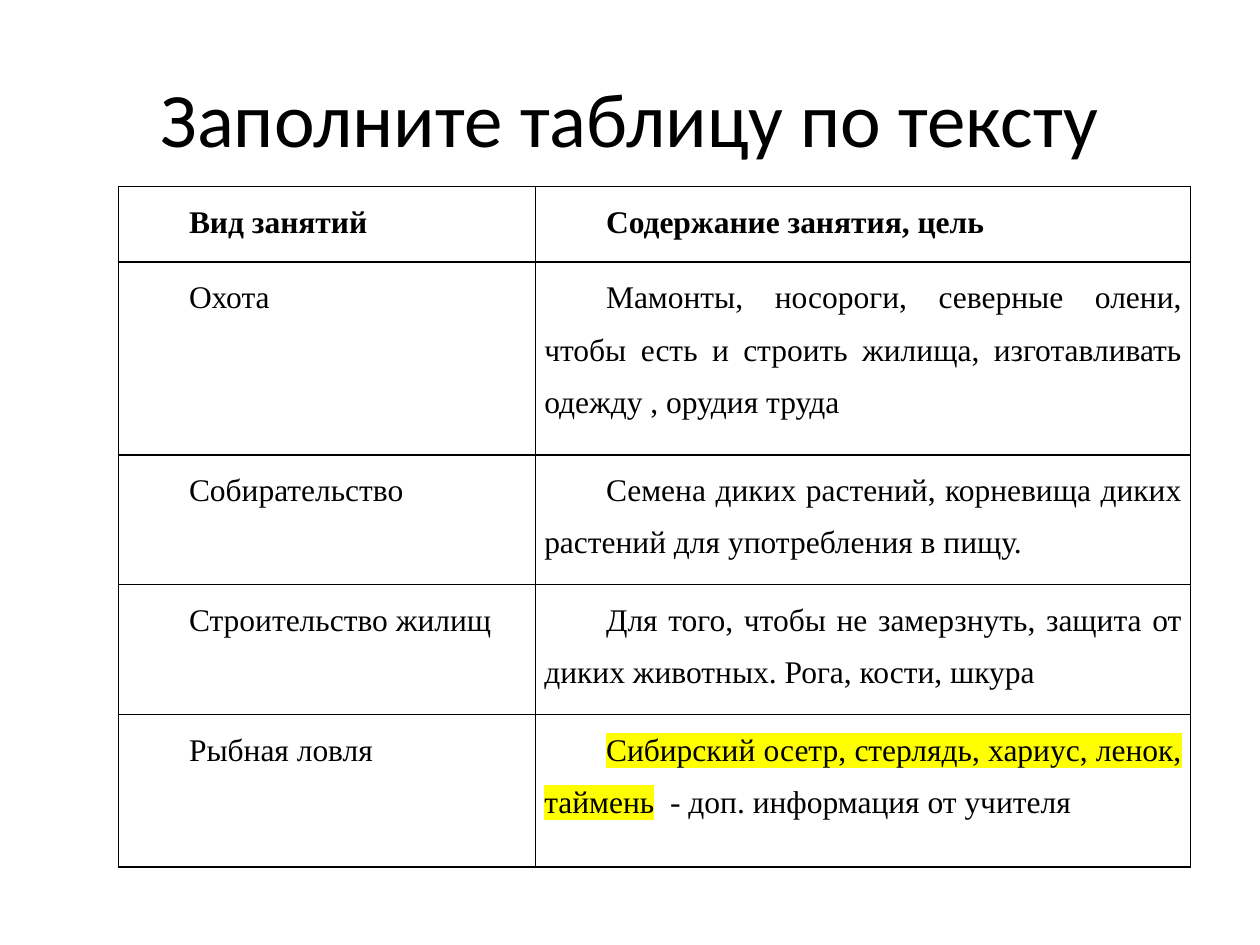
from dataclasses import dataclass

from lxml.etree import SubElement as Sub
from pptx import Presentation as Deck
from pptx.dml.color import RGBColor as Color
from pptx.enum.text import MSO_ANCHOR as Anchor, PP_ALIGN as Align
from pptx.oxml.ns import qn
from pptx.util import Inches, Pt


@dataclass(frozen=True)
class Theme:
    ink: str = "000000"
    paper: str = "FFFFFF"
    mark: str = "FFFF00"
    head: str = "Calibri"
    body: str = "Times New Roman"
    large: int = 44
    small: int = 18
    rule: int = 1


@dataclass(frozen=True)
class Row:
    height: float
    kind: str
    goal: str
    bold: bool = False
    mark: str = ""


THEME = Theme()
LEFT, TOP = 0.94, 1.48
WIDTHS = (3.31, 5.2)
INDENT = 0.49
ROWS = (
    Row(0.6, "Вид занятий", "Содержание занятия, цель", bold=True),
    Row(1.53, "Охота", "Мамонты, носороги, северные олени, чтобы есть и "
        "строить жилища, изготавливать одежду , орудия труда"),
    Row(1.03, "Собирательство", "Семена диких растений, корневища диких "
        "растений для употребления в пищу."),
    Row(1.03, "Строительство жилищ", "Для того, чтобы не замерзнуть, "
        "защита от диких животных. Рога, кости, шкура"),
    Row(1.21, "Рыбная ловля", "  - доп. информация от учителя",
        mark="Сибирский осетр, стерлядь, хариус, ленок, таймень"),
)


def write(para, text: str, *, font: str = THEME.body, size: int = THEME.small,
          bold: bool = False, mark: str = "") -> None:
    run = para.add_run()
    run.text = text
    run.font.name = font
    run.font.size = Pt(size)
    run.font.bold = bold
    run.font.color.rgb = Color.from_string(THEME.ink)
    if mark:
        props = run.font._element
        light = Sub(props, qn("a:highlight"))
        Sub(light, qn("a:srgbClr"), val=mark)
        props.find(qn("a:solidFill")).addnext(light)


def frame(cell) -> None:
    props = cell._tc.get_or_add_tcPr()
    for spot, side in enumerate("LRTB"):
        line = Sub(props, qn(f"a:ln{side}"), w=str(Pt(THEME.rule)))
        fill = Sub(line, qn("a:solidFill"))
        Sub(fill, qn("a:srgbClr"), val=THEME.ink)
        props.insert(spot, line)


def fill_cell(cell, text: str, bold: bool, mark: str = "") -> None:
    cell.fill.solid()
    cell.fill.fore_color.rgb = Color.from_string(THEME.paper)
    cell.margin_left = cell.margin_right = Inches(0.07)
    cell.margin_top, cell.margin_bottom = Inches(0.01), Inches(0)
    frame(cell)
    para = cell.text_frame.paragraphs[0]
    para.alignment = Align.JUSTIFY
    para.line_spacing = 1.5
    props = para._p.get_or_add_pPr()
    props.set("marL", "0")
    props.set("indent", str(Inches(INDENT)))
    if mark:
        write(para, mark, mark=THEME.mark)
    write(para, text, bold=bold)


def add_title(slide, text: str) -> None:
    box = slide.shapes.add_textbox(Inches(0.5), Inches(0.3), Inches(9), Inches(1.25))
    body = box.text_frame
    body.word_wrap = True
    body.vertical_anchor = Anchor.MIDDLE
    para = body.paragraphs[0]
    para.alignment = Align.CENTER
    write(para, text, font=THEME.head, size=THEME.large)


def add_grid(slide, rows: tuple[Row, ...]) -> None:
    high = sum(row.height for row in rows)
    grid = slide.shapes.add_table(len(rows), len(WIDTHS), Inches(LEFT), Inches(TOP),
                                  Inches(sum(WIDTHS)), Inches(high)).table
    grid.first_row = grid.horz_banding = False
    for col, width in zip(grid.columns, WIDTHS):
        col.width = Inches(width)
    for line, row in zip(grid.rows, rows):
        line.height = Inches(row.height)
        kind, goal = line.cells
        fill_cell(kind, row.kind, row.bold)
        fill_cell(goal, row.goal, row.bold, row.mark)


def main() -> None:
    deck = Deck()
    deck.slide_width, deck.slide_height = Inches(10), Inches(7.5)
    slide = deck.slides.add_slide(deck.slide_layouts[6])
    add_title(slide, "Заполните таблицу по тексту")
    add_grid(slide, ROWS)
    deck.save("out.pptx")


if __name__ == "__main__":
    main()
